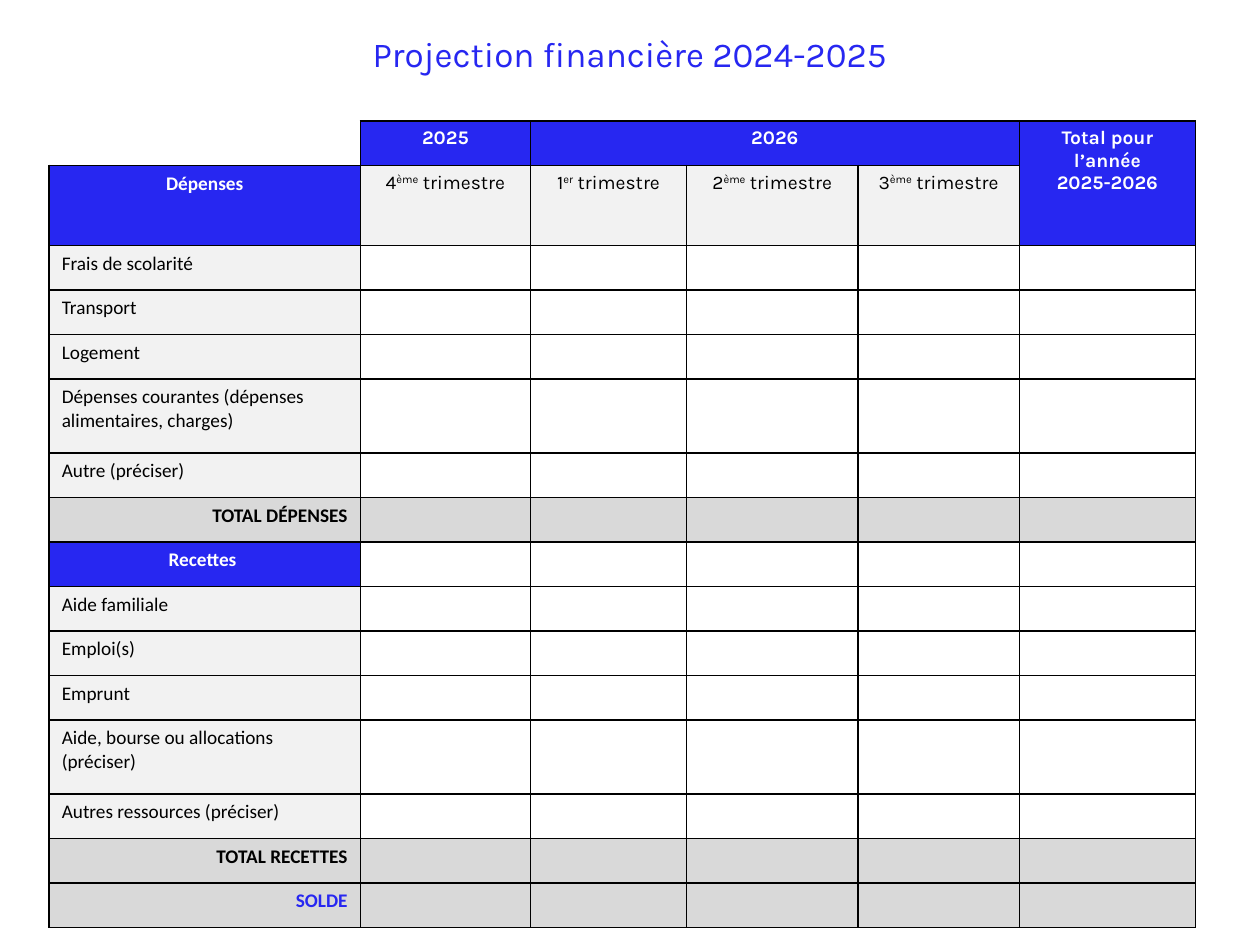
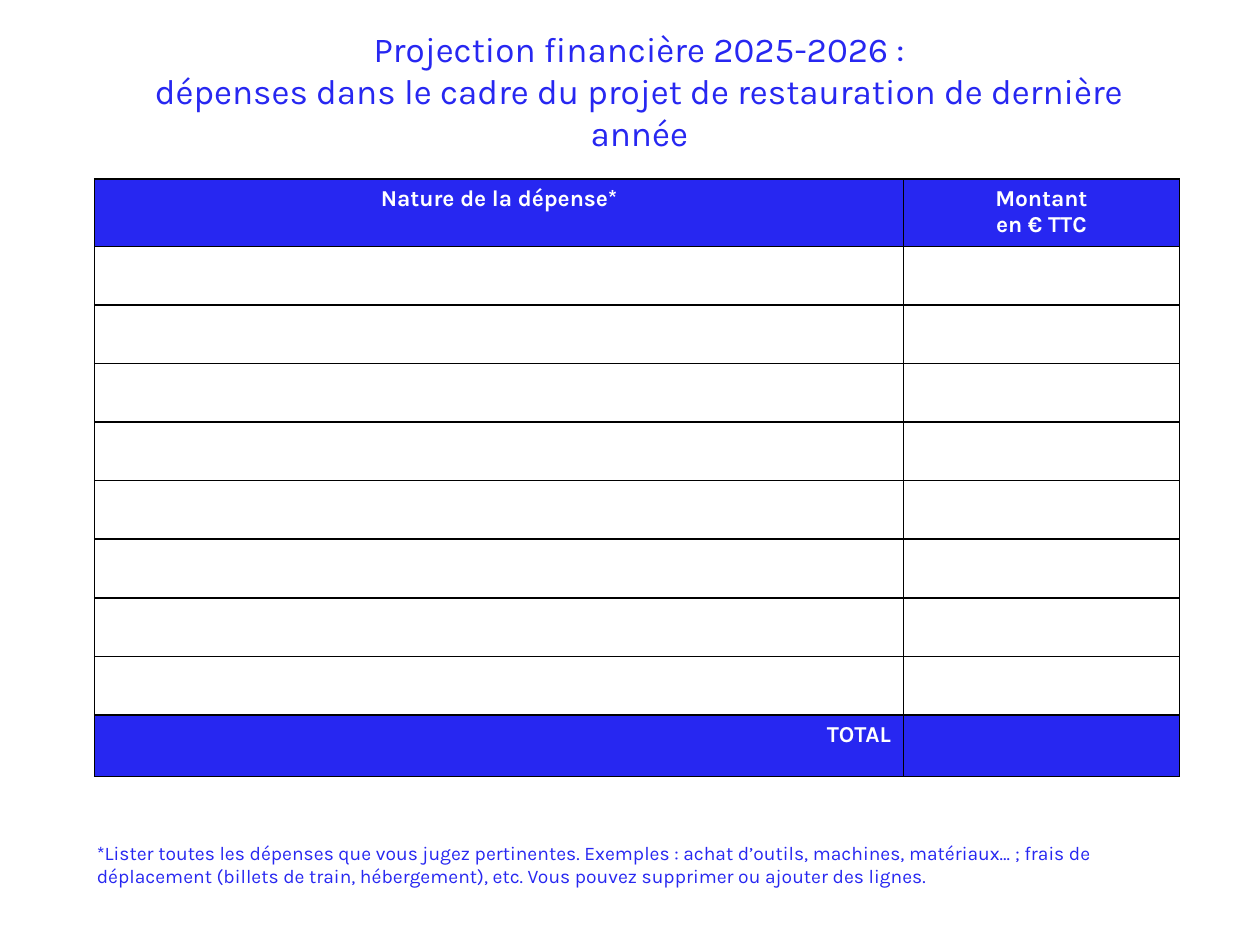
from lxml import etree
from pptx import Presentation
from pptx import util as u
from pptx.dml.color import RGBColor
from pptx.enum import text as t
from pptx.oxml import ns

BLUE = RGBColor(0x27, 0x27, 0xF1)
WHITE = RGBColor(0xFF, 0xFF, 0xFF)
BLACK = RGBColor(0, 0, 0)
PALE = RGBColor(0xF2, 0xF2, 0xF2)
GREY = RGBColor(0xD9, 0xD9, 0xD9)
LEFT, CENTER, RIGHT = t.PP_ALIGN.LEFT, t.PP_ALIGN.CENTER, t.PP_ALIGN.RIGHT
ALL_SIDES = ("L", "R", "T", "B")

BUDGET_TITLE = ["Projection financière 2024-2025"]
YEARS = [(1, ["2025"]), (2, ["2026"]), (5, ["Total pour l’année", "2025-2026"])]
QUARTERS = [("4", "ème"), ("1", "er"), ("2", "ème"), ("3", "ème")]
BUDGET_LINES = [
    ("heading", "Dépenses"),
    ("item", "Frais de scolarité"),
    ("item", "Transport"),
    ("item", "Logement"),
    ("item", "Dépenses courantes (dépenses alimentaires, charges)"),
    ("item", "Autre (préciser)"),
    ("total", "TOTAL DÉPENSES"),
    ("heading", "Recettes "),
    ("item", "Aide familiale"),
    ("item", "Emploi(s)"),
    ("item", "Emprunt"),
    ("item", "Aide, bourse ou allocations (préciser)"),
    ("item", "Autres ressources (préciser)"),
    ("total", "TOTAL RECETTES"),
    ("balance", "SOLDE"),
]
LINE_STYLES = {
    "heading": (BLUE, WHITE, WHITE, True, CENTER),
    "item": (PALE, WHITE, BLACK, False, LEFT),
    "total": (GREY, GREY, BLACK, True, RIGHT),
    "balance": (GREY, GREY, BLUE, True, RIGHT),
}
BUDGET_COLUMNS = [2.47, 1.35, 1.24, 1.36, 1.28, 1.4]
BUDGET_ROW = 0.353
TALL_ROWS = {1: 0.635, 5: 0.59, 12: 0.59}

PROJECT_TITLE = [
    "Projection financière 2025-2026 :",
    "dépenses dans le cadre du projet de restauration de dernière année",
]
PROJECT_HEADINGS = [["Nature de la dépense*"], ["Montant", "en € TTC"]]
PROJECT_COLUMNS = [6.42, 2.19]
PROJECT_ROWS = [0.52] + [0.465] * 8 + [0.49]
FOOTNOTE = [
    "*Lister toutes les dépenses que vous jugez pertinentes. Exemples : "
    "achat d’outils, machines, matériaux… ; frais de déplacement (billets "
    "de train, hébergement), etc. Vous pouvez supprimer ou ajouter des lignes."
]


def write(frame, lines, size, color, align=LEFT, bold=False, font="Karla"):
    for number, line in enumerate(lines):
        paragraph = frame.add_paragraph() if number else frame.paragraphs[0]
        paragraph.alignment = align
        pieces = [(line, False)] if isinstance(line, str) else line
        for piece, raised in pieces:
            run = paragraph.add_run()
            run.text = piece
            run.font.name = font
            run.font.size = u.Pt(size)
            run.font.bold = bold
            run.font.color.rgb = color
            if raised:
                run._r.get_or_add_rPr().set("baseline", "30000")


def add_text(slide, place, lines, size, align):
    frame = slide.shapes.add_textbox(*map(u.Inches, place)).text_frame
    frame.word_wrap = True
    frame.auto_size = t.MSO_AUTO_SIZE.SHAPE_TO_FIT_TEXT
    write(frame, lines, size, BLUE, align)


def border(cell, sides):
    props = cell._tc.get_or_add_tcPr()
    for position, side in enumerate(sides):
        line = etree.Element(ns.qn(f"a:ln{side}"), w=str(u.Pt(1)))
        fill = etree.SubElement(line, ns.qn("a:solidFill"))
        etree.SubElement(fill, ns.qn("a:srgbClr"), val=str(BLACK))
        props.insert(position, line)


def paint(cell, color):
    cell.fill.solid()
    cell.fill.fore_color.rgb = color


def add_grid(slide, left, top, widths, heights, size):
    place = map(u.Inches, (left, top, sum(widths), sum(heights)))
    table = slide.shapes.add_table(len(heights), len(widths), *place).table
    table.first_row = table.horz_banding = False
    for column, width in zip(table.columns, widths):
        column.width = u.Inches(width)
    for row, height in zip(table.rows, heights):
        row.height = u.Inches(height)
    for cell in table.iter_cells():
        paint(cell, WHITE)
        paragraph = cell.text_frame.paragraphs[0]._p
        etree.SubElement(paragraph, ns.qn("a:endParaRPr"), sz=str(size * 100))
    return table


def build_budget(slide):
    heights = [TALL_ROWS.get(row, BUDGET_ROW) for row in range(len(BUDGET_LINES) + 1)]
    table = add_grid(slide, 0.39, 0.96, BUDGET_COLUMNS, heights, 11)
    for row, (kind, label) in enumerate(BUDGET_LINES, 1):
        label_fill, value_fill, color, bold, align = LINE_STYLES[kind]
        for column in range(len(BUDGET_COLUMNS)):
            paint(table.cell(row, column), value_fill if column else label_fill)
        write(table.cell(row, 0).text_frame, [label], 11, color, align, bold, "Calibri")
    for column, (number, ending) in enumerate(QUARTERS, 1):
        cell = table.cell(1, column)
        paint(cell, PALE)
        quarter = [(number, False), (ending, True), (" trimestre", False)]
        write(cell.text_frame, [quarter], 11, BLACK, CENTER)
    table.cell(0, 2).merge(table.cell(0, 4))
    table.cell(0, 5).merge(table.cell(1, 5))
    for column, lines in YEARS:
        cell = table.cell(0, column)
        paint(cell, BLUE)
        write(cell.text_frame, lines, 11, WHITE, CENTER, True)
    corner = table.cell(0, 0)
    corner.fill.background()
    for cell in table.iter_cells():
        border(cell, ("R", "B") if cell == corner else ALL_SIDES)
    add_text(slide, (0, 0.21, 10, 0.44), BUDGET_TITLE, 20, CENTER)


def build_project(slide):
    table = add_grid(slide, 0.75, 1.42, PROJECT_COLUMNS, PROJECT_ROWS, 13)
    last = len(PROJECT_ROWS) - 1
    for column, lines in enumerate(PROJECT_HEADINGS):
        write(table.cell(0, column).text_frame, lines, 13, WHITE, CENTER, True)
        for row in (0, last):
            paint(table.cell(row, column), BLUE)
    write(table.cell(last, 0).text_frame, ["TOTAL"], 13, WHITE, RIGHT, True)
    for cell in table.iter_cells():
        border(cell, ALL_SIDES)
    add_text(slide, (0.77, 0.17, 8.61, 1.1), PROJECT_TITLE, 20, CENTER)
    add_text(slide, (0.67, 6.63, 8.8, 0.47), FOOTNOTE, 11, LEFT)


def main():
    deck = Presentation()
    deck.slide_width, deck.slide_height = u.Inches(10), u.Inches(7.5)
    for build in (build_budget, build_project):
        build(deck.slides.add_slide(deck.slide_layouts[6]))
    deck.save("out.pptx")


if __name__ == "__main__":
    main()
